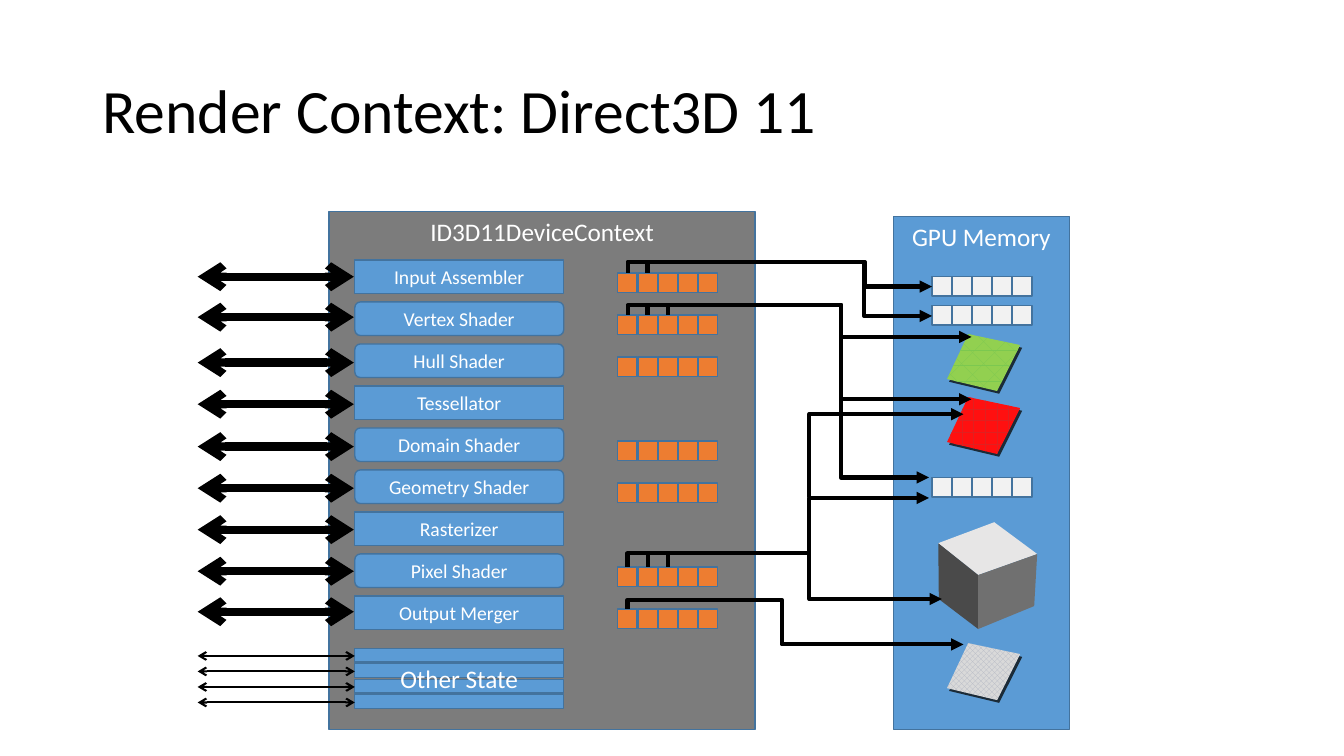
from dataclasses import dataclass
from typing import Optional

from lxml.etree import SubElement
from pptx import Presentation
from pptx.dml.color import RGBColor
from pptx.enum.dml import MSO_PATTERN
from pptx.enum.shapes import MSO_CONNECTOR, MSO_SHAPE
from pptx.enum.text import MSO_ANCHOR, PP_ALIGN
from pptx.oxml.ns import qn
from pptx.util import Pt

BLACK = RGBColor(0x00, 0x00, 0x00)
WHITE = RGBColor(0xFF, 0xFF, 0xFF)
GRAY = RGBColor(0x7C, 0x7C, 0x7C)
BLUE = RGBColor(0x5B, 0x9B, 0xD5)
OUTLINE = RGBColor(0x43, 0x73, 0x9E)
ORANGE = RGBColor(0xED, 0x7D, 0x31)
PALE = RGBColor(0xF2, 0xF2, 0xF2)
EDGE = RGBColor(0x1B, 0x2B, 0x38)
CUBE_TOP = RGBColor(0xE7, 0xE6, 0xE6)
CUBE_LEFT = RGBColor(0x4A, 0x4A, 0x4A)
CUBE_RIGHT = RGBColor(0x70, 0x70, 0x70)
GREEN = RGBColor(0x92, 0xD0, 0x50)
GREEN_LINES = RGBColor(0x7C, 0xC8, 0x50)
RED = RGBColor(0xFF, 0x10, 0x10)
RED_LINES = RGBColor(0xE0, 0x20, 0x20)
SILVER = RGBColor(0xD9, 0xD9, 0xD9)
SILVER_LINES = RGBColor(0xB4, 0xB8, 0xC4)

RECT, ROUNDED = MSO_SHAPE.RECTANGLE, MSO_SHAPE.FLOWCHART_ALTERNATE_PROCESS
ROW_STEP = 30.6
STAGE_LEFT, STAGE_TOP, STAGE_WIDTH = 258.5, 189.4, 152.2
SLOT_LEFT, SLOT_TOP, SLOT_STEP, SLOT_SIZE = 450, 198.7, 14.6, 14.4
MEMORY_SLOT_LEFT = 679
ARROW_LEFT = 144

Point = tuple[float, float]


@dataclass
class Stage:
    name: str
    kind: MSO_SHAPE
    arrow_y: float
    has_slots: bool = True


@dataclass
class Route:
    start: Point
    end: Point
    bus: Optional[Point] = None  # x of the drop, y of the run; None for one corner
    arrow: bool = True


@dataclass
class Texture:
    top: float
    pattern: MSO_PATTERN
    lines: RGBColor
    ground: RGBColor


STAGES = [
    Stage("Input Assembler", RECT, 201.6),
    Stage("Vertex Shader", ROUNDED, 231.1),
    Stage("Hull Shader", ROUNDED, 264.2),
    Stage("Tessellator", RECT, 294.5, False),
    Stage("Domain Shader", ROUNDED, 325.4),
    Stage("Geometry Shader", ROUNDED, 355.7),
    Stage("Rasterizer", RECT, 385.9, False),
    Stage("Pixel Shader", ROUNDED, 416.2),
    Stage("Output Merger", RECT, 445.7),
]
TEXTURES = [
    Texture(243.4, MSO_PATTERN.DIVOT, GREEN_LINES, GREEN),
    Texture(289.3, MSO_PATTERN.HORIZONTAL_BRICK, RED_LINES, RED),
    Texture(468.6, MSO_PATTERN.OUTLINED_DIAMOND, SILVER_LINES, SILVER),
]
CUBE_FACES = [
    (CUBE_TOP, [(724.4, 380.5), (755.7, 403.7), (712.7, 419), (683.6, 395.8)]),
    (CUBE_LEFT, [(683.6, 395.8), (712.7, 419), (712.7, 458.3), (684, 436.5)]),
    (CUBE_RIGHT, [(712.7, 419), (755.7, 403.7), (753.5, 441.6), (712.7, 458.3)]),
]


def slot_pin(row: int, slot: int) -> Point:
    return SLOT_LEFT + SLOT_SIZE / 2 + slot * SLOT_STEP, SLOT_TOP + row * ROW_STEP


HUB = (589.7, 403.2)
ROUTES = [
    Route(slot_pin(0, 0), (679, 208.8), (630, 190.8)),
    Route(slot_pin(0, 1), (679, 230.2), (629.6, 190.8)),
    Route(slot_pin(1, 0), (707.8, 245.5), (612.7, 222.4)),
    Route(slot_pin(1, 2), (676.8, 347.9), (612.7, 222.4)),
    Route(slot_pin(1, 1), (707.8, 290.9), (612.7, 222.4)),
    Route(slot_pin(7, 2), (686.2, 436.4), (HUB[0], HUB[1])),
    Route(slot_pin(8, 0), (702, 469.5), (569.5, 437)),
    Route(slot_pin(7, 1), HUB, arrow=False),
    Route(HUB, (676.8, 362.8)),
    Route(slot_pin(7, 0), HUB, arrow=False),
    Route((HUB[0], 362.2), (702, 301.8)),
]

presentation = Presentation()
presentation.slide_width, presentation.slide_height = Pt(979.2), Pt(550.8)
slide = presentation.slides.add_slide(presentation.slide_layouts[6])
shapes = slide.shapes


def write(shape, text: str, size: float, color: RGBColor, align=PP_ALIGN.CENTER) -> None:
    shape.text_frame.text = text
    paragraph = shape.text_frame.paragraphs[0]
    paragraph.alignment = align
    font = paragraph.runs[0].font
    font.name, font.size, font.color.rgb = "Calibri", Pt(size), color


def box(left: float, top: float, width: float, height: float, fill: RGBColor,
        kind=RECT, line_width: float = 1):
    shape = shapes.add_shape(kind, Pt(left), Pt(top), Pt(width), Pt(height))
    shape.shadow.inherit = False
    shape.fill.solid()
    shape.fill.fore_color.rgb = fill
    shape.line.color.rgb = OUTLINE
    shape.line.width = Pt(line_width)
    return shape


def panel(left: float, top: float, width: float, height: float, fill: RGBColor, title: str) -> None:
    frame = box(left, top, width, height, fill)
    write(frame, title, 18.4, WHITE)
    frame.text_frame.vertical_anchor = MSO_ANCHOR.TOP


def slot_row(left: float, top: float, fill: RGBColor) -> None:
    for slot in range(5):
        box(left + slot * SLOT_STEP, top, SLOT_SIZE, SLOT_SIZE, fill, line_width=1.25)


def polygon(points: list[Point]):
    builder = shapes.build_freeform(Pt(points[0][0]), Pt(points[0][1]))
    builder.add_line_segments([(Pt(x), Pt(y)) for x, y in points[1:]], close=True)
    face = builder.convert_to_shape()
    face.shadow.inherit = False
    face.line.fill.background()
    return face


def connect(kind, start: Point, end: Point, width: float, **ends: str):
    link = shapes.add_connector(kind, Pt(start[0]), Pt(start[1]), Pt(end[0]), Pt(end[1]))
    link.line.color.rgb = BLACK
    link.line.width = Pt(width)
    SubElement(link._element.spPr, qn("a:effectLst"))
    for end_name, style in ends.items():
        SubElement(link.line._get_or_add_ln(), qn(f"a:{end_name}"), type=style)
    return link


def draw_route(route: Route) -> None:
    (x1, y1), (x2, y2) = route.start, route.end
    # The frame is turned a quarter, so its width spans the rise and its height the run
    rise, run = abs(y2 - y1), x2 - x1
    left, top = (x1 + x2 - rise) / 2, (y1 + y2 - run) / 2
    ends = {"tailEnd": "triangle"} if route.arrow else {}
    link = connect(MSO_CONNECTOR.ELBOW, (left, top), (left + rise, top + run), 3, **ends)
    frame = link._element.spPr.find(qn("a:xfrm"))
    geometry = link._element.spPr.find(qn("a:prstGeom"))
    frame.set("flipH", "1")
    if route.bus is None:
        frame.set("rot", "5400000")
        frame.set("flipV", "1")
        geometry.set("prst", "bentConnector2")
        return
    frame.set("rot", "16200000")
    geometry.set("prst", "bentConnector4")
    bus_x, bus_y = route.bus
    ratios = {"adj1": (bus_y - y1) / (y2 - y1), "adj2": (bus_x - x1) / run}
    for name, ratio in ratios.items():
        SubElement(geometry.find(qn("a:avLst")), qn("a:gd"), name=name,
                   fmla=f"val {round(ratio * 100000)}")


def draw_texture(texture: Texture) -> None:
    corners = [(705.4, 0), (743.3, 8), (726.5, 41.5), (690, 32.8)]
    edge = polygon([(x + 1.5, texture.top + y + 2) for x, y in corners])
    edge.fill.solid()
    edge.fill.fore_color.rgb = EDGE
    face = polygon([(x, texture.top + y) for x, y in corners])
    face.fill.patterned()
    face.fill.pattern = texture.pattern
    face.fill.fore_color.rgb = texture.lines
    face.fill.back_color.rgb = texture.ground


# Title
title = shapes.add_textbox(Pt(67.7), Pt(29.5), Pt(844.6), Pt(106.6))
title.text_frame.word_wrap = True
title.text_frame.vertical_anchor = MSO_ANCHOR.MIDDLE
write(title, "Render Context: Direct3D 11", 44.9, BLACK, PP_ALIGN.LEFT)
title.text_frame.paragraphs[0].line_spacing = 0.9

# Panels
panel(239.8, 154.1, 310.3, 377.3, GRAY, "ID3D11DeviceContext")
panel(650.9, 157.7, 128.2, 373.7, BLUE, "GPU Memory")

# Pipeline stages with their arrows and slots
for row, stage in enumerate(STAGES):
    block = box(STAGE_LEFT, STAGE_TOP + row * ROW_STEP, STAGE_WIDTH, 24.5, BLUE, stage.kind)
    write(block, stage.name, 14.3, WHITE)
    connect(MSO_CONNECTOR.STRAIGHT, (ARROW_LEFT, stage.arrow_y), (257.8, stage.arrow_y), 6,
            headEnd="arrow", tailEnd="arrow")
    if stage.has_slots:
        slot_row(SLOT_LEFT, SLOT_TOP + row * ROW_STEP, ORANGE)

# Memory contents
for top in (201.4, 222.7, 347.9):
    slot_row(MEMORY_SLOT_LEFT, top, PALE)
for texture in TEXTURES:
    draw_texture(texture)
for color, corners in CUBE_FACES:
    cube_face = polygon(corners)
    cube_face.fill.solid()
    cube_face.fill.fore_color.rgb = color

# Bindings from slots to memory
for route in ROUTES:
    draw_route(route)

# Other state
for bar in range(4):
    bar_top = 472.3 + bar * 11.3
    box(STAGE_LEFT, bar_top, STAGE_WIDTH, 10.1, BLUE)
    connect(MSO_CONNECTOR.STRAIGHT, (ARROW_LEFT, bar_top + 5.6), (STAGE_LEFT, bar_top + 5.6), 1.5,
            headEnd="arrow", tailEnd="arrow")
other_state = shapes.add_textbox(Pt(283), Pt(479.5), Pt(103), Pt(30.2))
other_state.text_frame.word_wrap = False
write(other_state, "Other State", 18.4, WHITE)

presentation.save("out.pptx")
